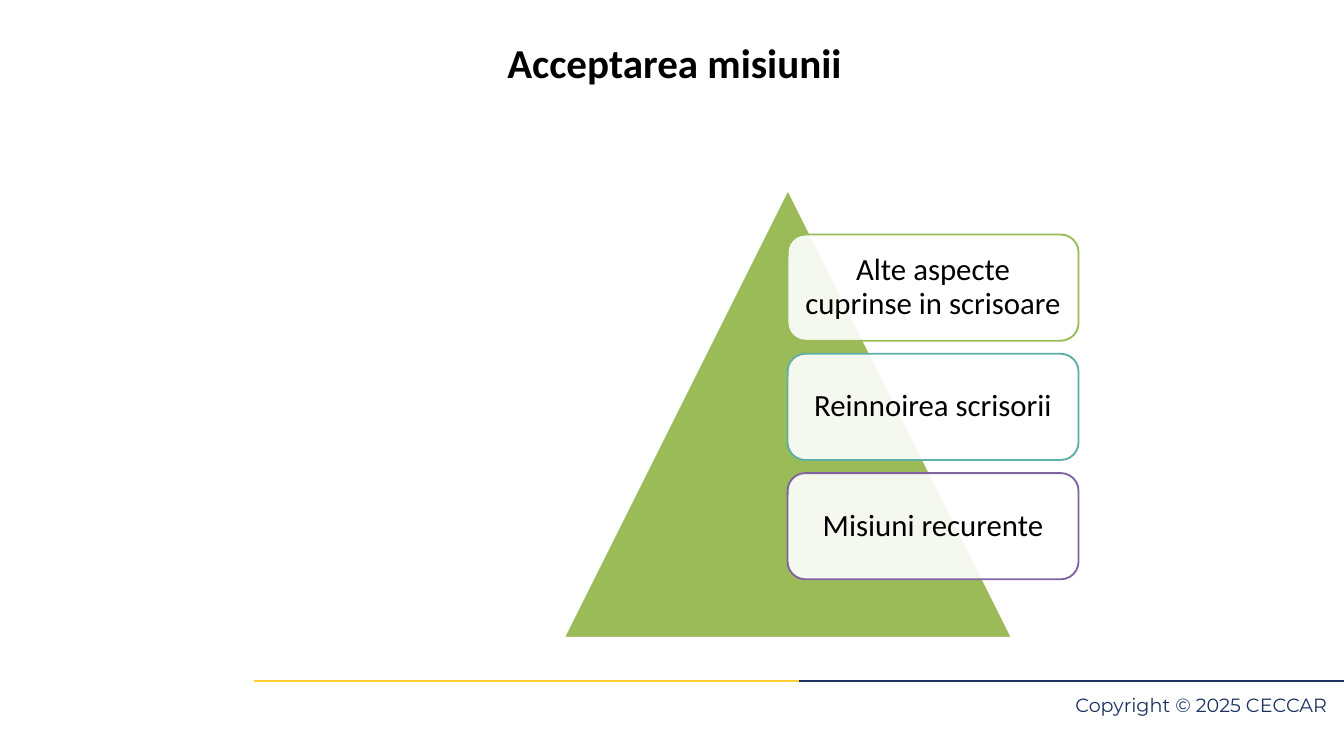
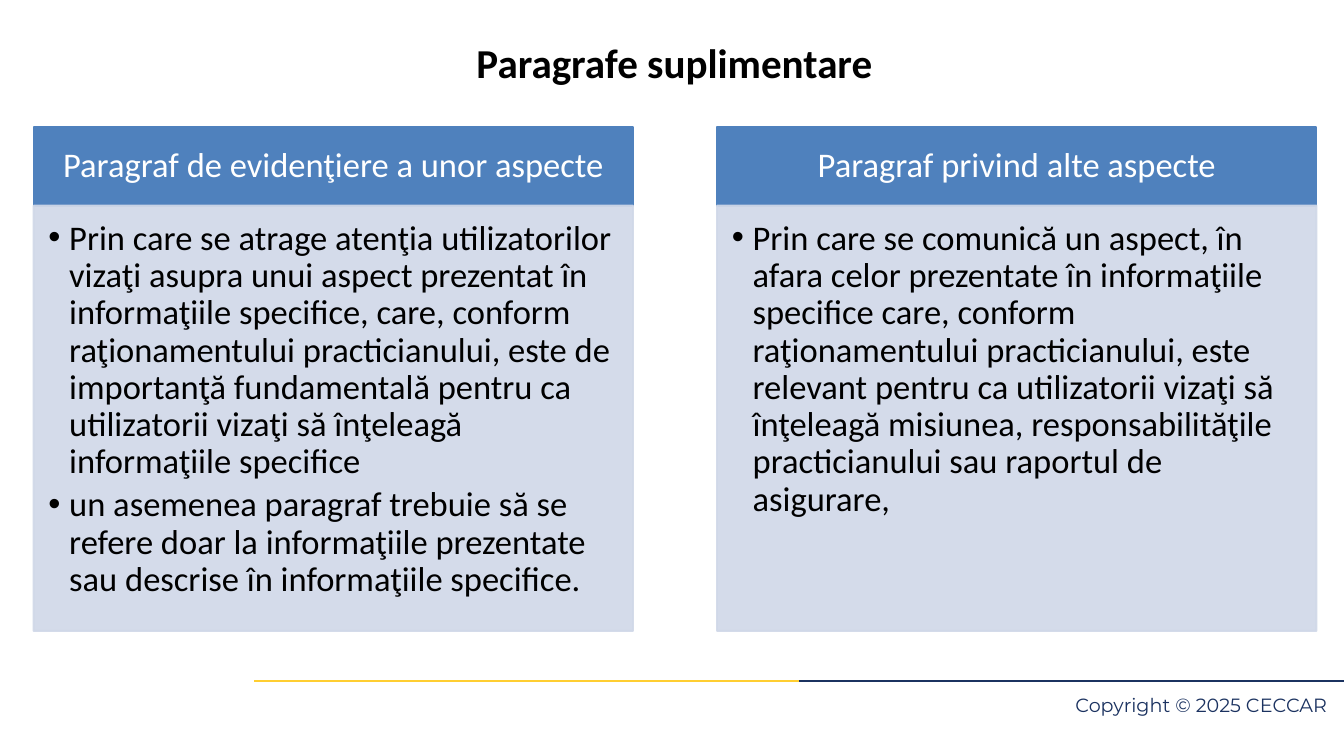
import pptx
import pptx.util
import pptx.dml.color
import pptx.enum.shapes
import pptx.enum.text
import pptx.oxml
import pptx.oxml.ns
from lxml import etree

Inches = pptx.util.Inches
Pt = pptx.util.Pt
RGBColor = pptx.dml.color.RGBColor
SHAPE = pptx.enum.shapes.MSO_SHAPE
ALIGN = pptx.enum.text.PP_ALIGN
ANCHOR = pptx.enum.text.MSO_ANCHOR
qn = pptx.oxml.ns.qn

BLACK = RGBColor(0x00, 0x00, 0x00)
WHITE = RGBColor(0xFF, 0xFF, 0xFF)
NAVY = RGBColor(0x1B, 0x32, 0x60)
YELLOW = RGBColor(0xFF, 0xCE, 0x31)
GREEN = RGBColor(0x9B, 0xBB, 0x59)
TEAL = RGBColor(0x5E, 0xAF, 0xA6)
PURPLE = RGBColor(0x80, 0x64, 0xA2)
BLUE = RGBColor(0x4F, 0x81, 0xBD)
PALE_BLUE = RGBColor(0xD0, 0xD8, 0xE8)


def write(frame, paragraphs, size, color=BLACK, font="Calibri", bold=False,
          align=ALIGN.CENTER, anchor=ANCHOR.MIDDLE, spacing=None, after=0,
          insets=(0.1, 0.05, 0.1, 0.05), bullet_indent=None):
    """Fill a text frame with one paragraph per string."""
    frame.word_wrap = True
    frame.vertical_anchor = anchor
    (frame.margin_left, frame.margin_top,
     frame.margin_right, frame.margin_bottom) = map(Inches, insets)
    for index, text in enumerate(paragraphs):
        paragraph = frame.paragraphs[0] if index == 0 else frame.add_paragraph()
        paragraph.alignment = align
        paragraph.line_spacing = spacing
        paragraph.space_after = Pt(after)
        if bullet_indent:
            properties = paragraph._p.get_or_add_pPr()
            properties.set("marL", str(Inches(bullet_indent)))
            properties.set("indent", str(-Inches(bullet_indent)))
            etree.SubElement(properties, qn("a:buFont")).set("typeface", "Arial")
            etree.SubElement(properties, qn("a:buChar")).set("char", "•")
        run = paragraph.add_run()
        run.text = text
        run.font.name = font
        run.font.size = Pt(size)
        run.font.bold = bold
        run.font.color.rgb = color


class Deck:
    """Holds the shared style and the slide being built."""

    def __init__(self):
        self.presentation = pptx.Presentation()
        self.presentation.slide_width = Inches(20)
        self.presentation.slide_height = Inches(11.25)
        self.slide = None

    def new_slide(self, title):
        self.slide = self.presentation.slides.add_slide(
            self.presentation.slide_layouts[6])
        # Footer rule and copyright line
        self.rule(11.88, 20, NAVY)
        self.text(14.25, 10.37, 5.58, 0.3, ["Copyright © 2025 CECCAR"], size=20.5,
                  color=NAVY, font="Montserrat", align=ALIGN.RIGHT,
                  anchor=ANCHOR.TOP, spacing=Pt(20.5), insets=(0, 0, 0.08, 0))
        self.rule(3.78, 11.89, YELLOW)
        # Title
        self.text(0.5, 0.3, 19.08, 1.25, [title], size=44, bold=True)

    def rule(self, start, end, color, y=10.14):
        line = self.slide.shapes.add_connector(
            pptx.enum.shapes.MSO_CONNECTOR.STRAIGHT,
            Inches(start), Inches(y), Inches(end), Inches(y))
        line.line.color.rgb = color
        line.line.width = Pt(2.25)
        etree.SubElement(line._element.spPr, qn("a:effectLst"))

    def text(self, left, top, width, height, paragraphs, **style):
        box = self.slide.shapes.add_textbox(
            Inches(left), Inches(top), Inches(width), Inches(height))
        write(box.text_frame, paragraphs, **style)

    def shape(self, preset, left, top, width, height, fill, outline,
              fill_opacity=100, outline_opacity=100):
        shape = self.slide.shapes.add_shape(
            preset, Inches(left), Inches(top), Inches(width), Inches(height))
        shape.shadow.inherit = False
        shape.fill.solid()
        shape.fill.fore_color.rgb = fill
        shape.line.color.rgb = outline
        shape.line.width = Pt(2)
        properties = shape._element.spPr
        for parent, opacity in ((properties, fill_opacity),
                                (properties.find(qn("a:ln")), outline_opacity)):
            if opacity < 100:
                color = parent.find(qn("a:solidFill")).find(qn("a:srgbClr"))
                etree.SubElement(color, qn("a:alpha")).set("val", str(opacity * 1000))
        return shape

    def topic(self, top, label, outline):
        card = self.shape(SHAPE.ROUNDED_RECTANGLE, 11.72, top, 4.33, 1.58,
                          WHITE, outline, fill_opacity=90)
        write(card.text_frame, [label], size=33, spacing=0.9, insets=(0.14,) * 4)

    def column(self, left, heading, points):
        header = self.shape(SHAPE.RECTANGLE, left, 1.89, 8.92, 1.17, BLUE, BLUE)
        write(header.text_frame, [heading], size=37, color=WHITE, spacing=0.9,
              insets=(0.29, 0.16, 0.29, 0.16))
        body = self.shape(SHAPE.RECTANGLE, left, 3.06, 8.92, 6.33, PALE_BLUE,
                          PALE_BLUE, fill_opacity=90, outline_opacity=90)
        write(body.text_frame, points, size=37, align=ALIGN.LEFT,
              anchor=ANCHOR.TOP, spacing=0.9, after=6,
              insets=(0.22, 0.22, 0.29, 0.32), bullet_indent=0.31)


def main():
    deck = Deck()

    # Engagement acceptance: topics over a pyramid
    deck.new_slide("Acceptarea misiunii")
    deck.shape(SHAPE.ISOSCELES_TRIANGLE, 8.39, 2.82, 6.67, 6.67, GREEN, WHITE)
    topics = [("Alte aspecte cuprinse in scrisoare", GREEN),
              ("Reinnoirea scrisorii", TEAL),
              ("Misiuni recurente", PURPLE)]
    for row, (label, outline) in enumerate(topics):
        deck.topic(3.49 + row * 1.775, label, outline)

    # Additional paragraphs: two columns
    deck.new_slide("Paragrafe suplimentare")
    columns = [
        ("Paragraf de evidenţiere a unor aspecte", [
            "Prin care se atrage atenţia utilizatorilor vizaţi asupra unui aspect "
            "prezentat în informaţiile specifice, care, conform raţionamentului "
            "practicianului, este de importanţă fundamentală pentru ca utilizatorii "
            "vizaţi să înţeleagă informaţiile specifice",
            "un asemenea paragraf trebuie să se refere doar la informaţiile "
            "prezentate sau descrise în informaţiile specifice."]),
        ("Paragraf privind alte aspecte", [
            "Prin care se comunică un aspect, în afara celor prezentate în "
            "informaţiile specifice care, conform raţionamentului practicianului, "
            "este relevant pentru ca utilizatorii vizaţi să înţeleagă misiunea, "
            "responsabilităţile practicianului sau raportul de asigurare,"]),
    ]
    for index, (heading, points) in enumerate(columns):
        deck.column(0.5 + index * 10.17, heading, points)

    deck.presentation.save("out.pptx")


if __name__ == "__main__":
    main()
